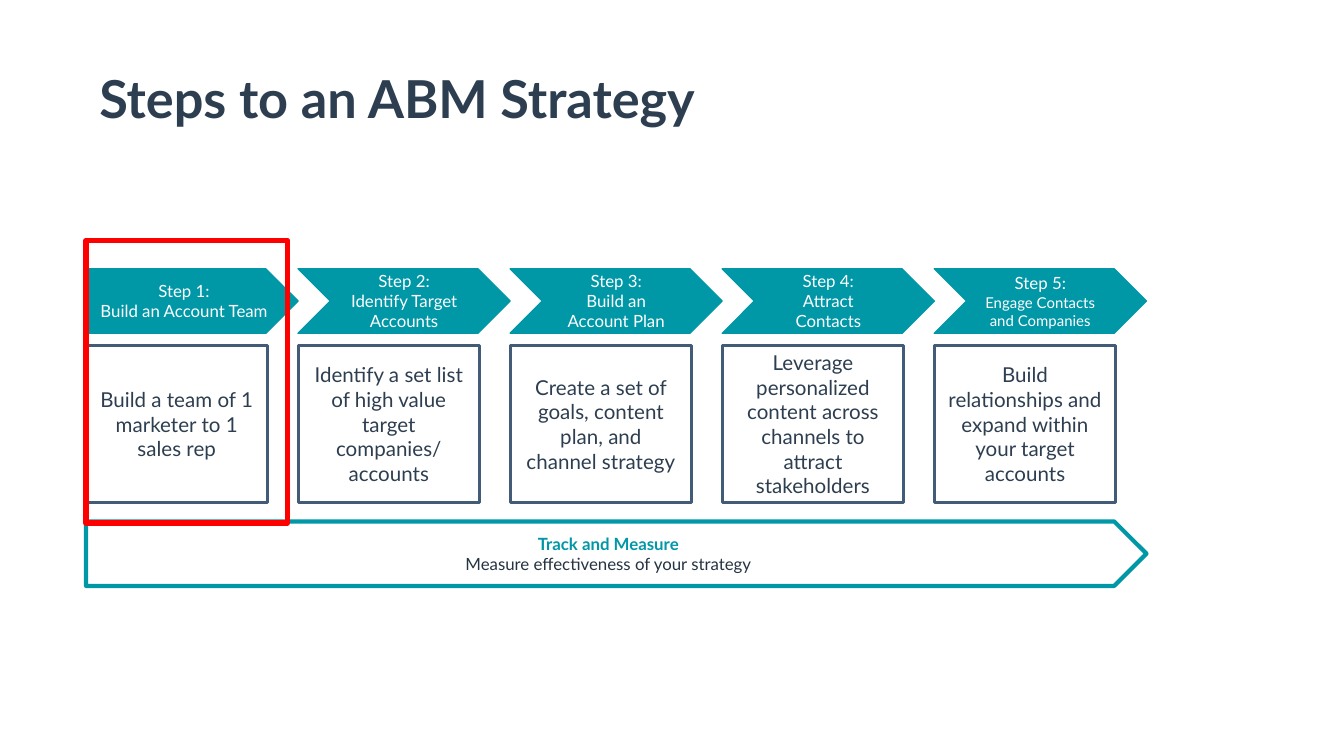
from pptx import Presentation
from pptx import util as u
from pptx.dml.color import RGBColor
from pptx.enum import shapes, text

# Content: step label, step name, name size, description
TITLE = "Steps to an ABM Strategy"
STEPS = [
    ("Step 1:", "Build an Account Team", "label",
     "Build a team of 1 marketer to 1 sales rep"),
    ("Step 2:", "Identify Target Accounts", "label",
     "Identify a set list of high value target companies/ accounts"),
    ("Step 3:", "Build an Account Plan", "label",
     "Create a set of goals, content plan, and channel strategy"),
    ("Step 4:", "Attract Contacts", "label",
     "Leverage personalized content across channels to attract stakeholders"),
    ("Step 5:", "Engage Contacts and Companies", "small",
     "Build relationships and expand within your target accounts"),
]
TRACK = ("Track and Measure", "Measure effectiveness of your strategy")

THEME = {
    "font": "Lato",
    "colors": {"ink": "2D3E50", "teal": "0097A7", "frame": "425B76",
               "dark": "253342", "white": "FFFFFF", "alert": "FF0000"},
    "sizes": {"title": 28, "body": 11, "label": 9, "small": 8},
}

# Layout in inches; the step arrows share the total width equally
LEFT, TOTAL_WIDTH, ARROW_HEIGHT = 0.64, 7.89, 0.48
STEP_WIDTH = TOTAL_WIDTH / len(STEPS)
ARROW_TOP, CARD_TOP, TRACK_TOP = 2, 2.57, 3.88
CARD_WIDTH, CARD_HEIGHT = 1.35, 1.17
MARGIN, CHEVRON_MARGIN = 0.1, 0.11


def color(name):
    return RGBColor.from_string(THEME["colors"][name])


def set_frame(box, anchor, side=MARGIN):
    values = {"word_wrap": True, "vertical_anchor": anchor,
              "margin_left": u.Inches(side), "margin_right": u.Inches(side),
              "margin_top": u.Inches(MARGIN),
              "margin_bottom": u.Inches(MARGIN)}
    for key, value in values.items():
        setattr(box.text_frame, key, value)


def add_span(para, words, size, ink, bold=False):
    span = para.add_run()
    span.text = words
    values = {"name": THEME["font"], "size": u.Pt(THEME["sizes"][size]),
              "bold": bold}
    for key, value in values.items():
        setattr(span.font, key, value)
    span.font.color.rgb = color(ink)


def add_box(page, kind, place, line, weight, fill=None, side=MARGIN):
    box = page.shapes.add_shape(kind, *map(u.Inches, place))
    box.shadow.inherit = False
    if fill:
        box.fill.solid()
        box.fill.fore_color.rgb = color(fill)
    else:
        box.fill.background()
    box.line.color.rgb = color(line)
    box.line.width = u.Pt(weight)
    set_frame(box, text.MSO_ANCHOR.MIDDLE, side)
    box.text_frame.paragraphs[0].alignment = text.PP_ALIGN.CENTER
    return box


def main():
    deck = Presentation()
    deck.slide_width = u.Inches(10)
    deck.slide_height = deck.slide_width * 9 // 16
    page = deck.slides.add_slide(deck.slide_layouts[6])
    kinds = shapes.MSO_SHAPE

    # Title
    title = page.shapes.add_textbox(*map(u.Inches, (LEFT, 0.39, 5.48, 0.7)))
    set_frame(title, text.MSO_ANCHOR.TOP)
    add_span(title.text_frame.paragraphs[0], TITLE, "title", "ink", True)

    # Step arrows with a card under each
    for index, (label, name, size, description) in enumerate(STEPS):
        left = LEFT + index * STEP_WIDTH
        kind, side = ((kinds.CHEVRON, CHEVRON_MARGIN) if index
                      else (kinds.PENTAGON, MARGIN))
        arrow = add_box(page, kind,
                        (left, ARROW_TOP, STEP_WIDTH, ARROW_HEIGHT),
                        "teal", 0.75, "teal", side)
        para = arrow.text_frame.paragraphs[0]
        add_span(para, label, "label", "white")
        para.add_line_break()
        add_span(para, name, size, "white")

        card = add_box(page, kinds.RECTANGLE,
                       (left, CARD_TOP, CARD_WIDTH, CARD_HEIGHT), "frame", 1.5)
        add_span(card.text_frame.paragraphs[0], description, "body", "ink")

    # Tracking arrow across all steps
    track = add_box(page, kinds.PENTAGON,
                    (LEFT, TRACK_TOP, TOTAL_WIDTH, ARROW_HEIGHT), "teal", 2.25)
    heading, detail = TRACK
    add_span(track.text_frame.paragraphs[0], heading, "label", "teal", True)
    para = track.text_frame.add_paragraph()
    para.alignment = text.PP_ALIGN.CENTER
    add_span(para, detail, "label", "dark")

    # Highlight around the first step
    add_box(page, kinds.RECTANGLE, (LEFT, 1.79, 1.5, 2.1), "alert", 3)

    deck.save("out.pptx")


if __name__ == "__main__":
    main()
